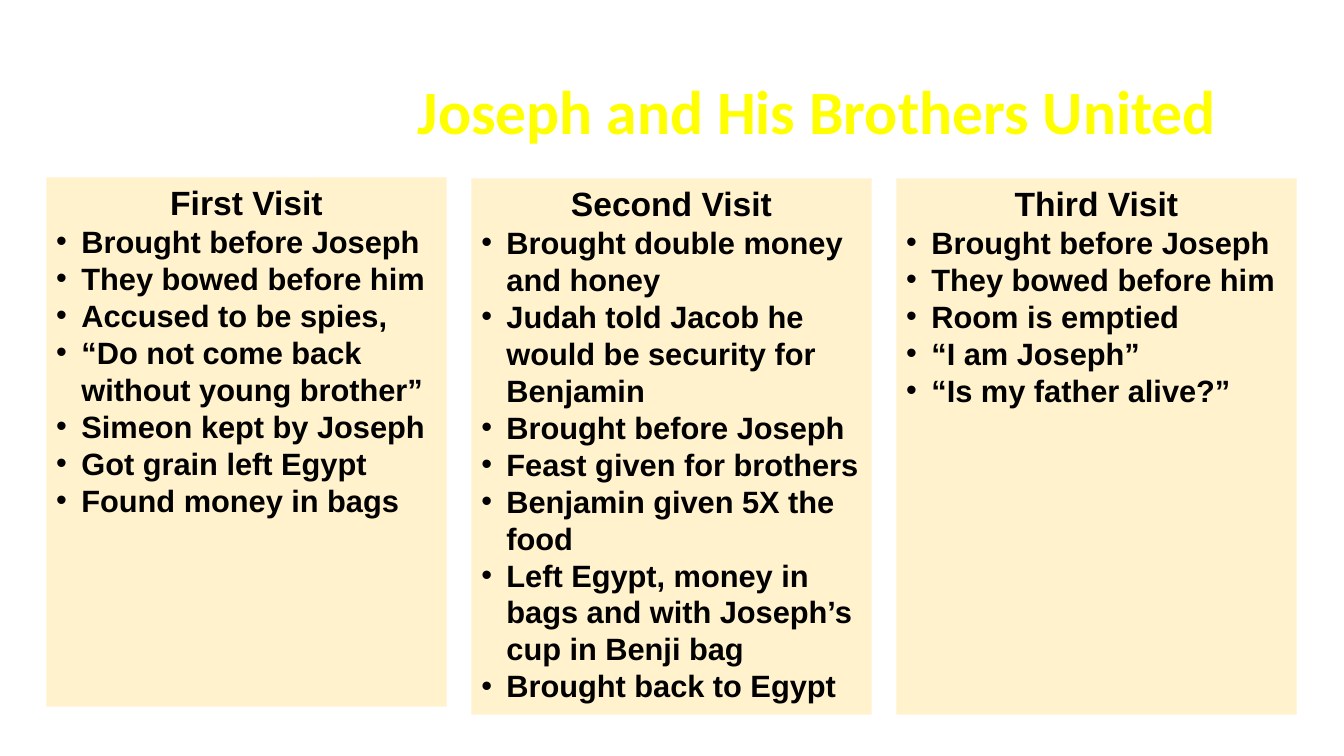
from lxml.etree import SubElement
from pptx import Presentation
from pptx.dml.color import RGBColor
from pptx.enum.shapes import MSO_SHAPE
from pptx.enum.text import MSO_ANCHOR, MSO_AUTO_SIZE, PP_ALIGN
from pptx.oxml.ns import qn
from pptx.util import Inches, Pt

# Content
TITLE = "Joseph and His Brothers United"
VISITS = [
    ("First Visit", [
        "Brought before Joseph",
        "They bowed before him",
        "Accused to be spies,",
        "“Do not come back without young brother”",
        "Simeon kept by Joseph",
        "Got grain left Egypt",
        "Found money in bags",
    ]),
    ("Second Visit", [
        "Brought double money and honey",
        "Judah told Jacob he would be security for Benjamin",
        "Brought before Joseph",
        "Feast given for brothers",
        "Benjamin given 5X the food",
        "Left Egypt, money in bags and with Joseph’s cup in Benji bag",
        "Brought back to Egypt",
    ]),
    ("Third Visit", [
        "Brought before Joseph",
        "They bowed before him",
        "Room is emptied",
        "“I am Joseph”",
        "“Is my father alive?”",
    ]),
]
COLORS = {"title": "FFFF00", "panel": "FFF2CC", "text": "000000"}

# Layout in inches: three columns, the first slightly higher and shorter
SLIDE_WIDTH, SLIDE_HEIGHT = 13.33, 7.5
FIRST_LEFT, PANEL_WIDTH, GUTTER = 0.46, 3.97, 0.245
PANEL_SPANS = [(1.76, 5.25), (1.77, 5.32), (1.77, 5.32)]
BULLET_INDENT = Inches(0.25)


def write(paragraph, text, size, color="text", font="Arial",
          align=PP_ALIGN.LEFT, bullet=False, line_spacing=None):
    paragraph.alignment = align
    if line_spacing:
        paragraph.line_spacing = line_spacing
    if bullet:
        properties = paragraph._p.get_or_add_pPr()
        properties.set("marL", str(BULLET_INDENT))
        properties.set("indent", str(-BULLET_INDENT))
        bullet_color = SubElement(properties, qn("a:buClr"))
        SubElement(bullet_color, qn("a:srgbClr"), val=COLORS[color])
        SubElement(properties, qn("a:buFont"), typeface="Arial")
        SubElement(properties, qn("a:buChar"), char="•")
    run = paragraph.add_run()
    run.text = text
    run.font.name = font
    run.font.size = Pt(size)
    run.font.bold = True
    run.font.color.rgb = RGBColor.from_string(COLORS[color])


def add_visit(slide, column, heading, events):
    top, height = PANEL_SPANS[column]
    left = FIRST_LEFT + column * (PANEL_WIDTH + GUTTER)
    panel = slide.shapes.add_shape(
        MSO_SHAPE.RECTANGLE, Inches(left), Inches(top),
        Inches(PANEL_WIDTH), Inches(height))
    panel.shadow.inherit = False
    panel.fill.solid()
    panel.fill.fore_color.rgb = RGBColor.from_string(COLORS["panel"])
    panel.line.fill.background()

    frame = panel.text_frame
    frame.word_wrap = True
    frame.auto_size = MSO_AUTO_SIZE.NONE
    frame.vertical_anchor = MSO_ANCHOR.TOP
    write(frame.paragraphs[0], heading, 24, align=PP_ALIGN.CENTER)
    for event in events:
        write(frame.add_paragraph(), event, 22, bullet=True)


def main():
    deck = Presentation()
    deck.slide_width = Inches(SLIDE_WIDTH)
    deck.slide_height = Inches(SLIDE_HEIGHT)
    slide = deck.slides.add_slide(deck.slide_layouts[5])

    # Title
    title = slide.shapes.title
    title.left, title.top = Inches(2.96), Inches(0.33)
    title.width, title.height = Inches(10.3), Inches(1.62)
    title.text_frame.vertical_anchor = MSO_ANCHOR.MIDDLE
    write(title.text_frame.paragraphs[0], TITLE, 44, color="title",
          font="Calibri", align=PP_ALIGN.CENTER, line_spacing=0.9)

    # Visit panels
    for column, (heading, events) in enumerate(VISITS):
        add_visit(slide, column, heading, events)

    deck.save("out.pptx")


if __name__ == "__main__":
    main()
